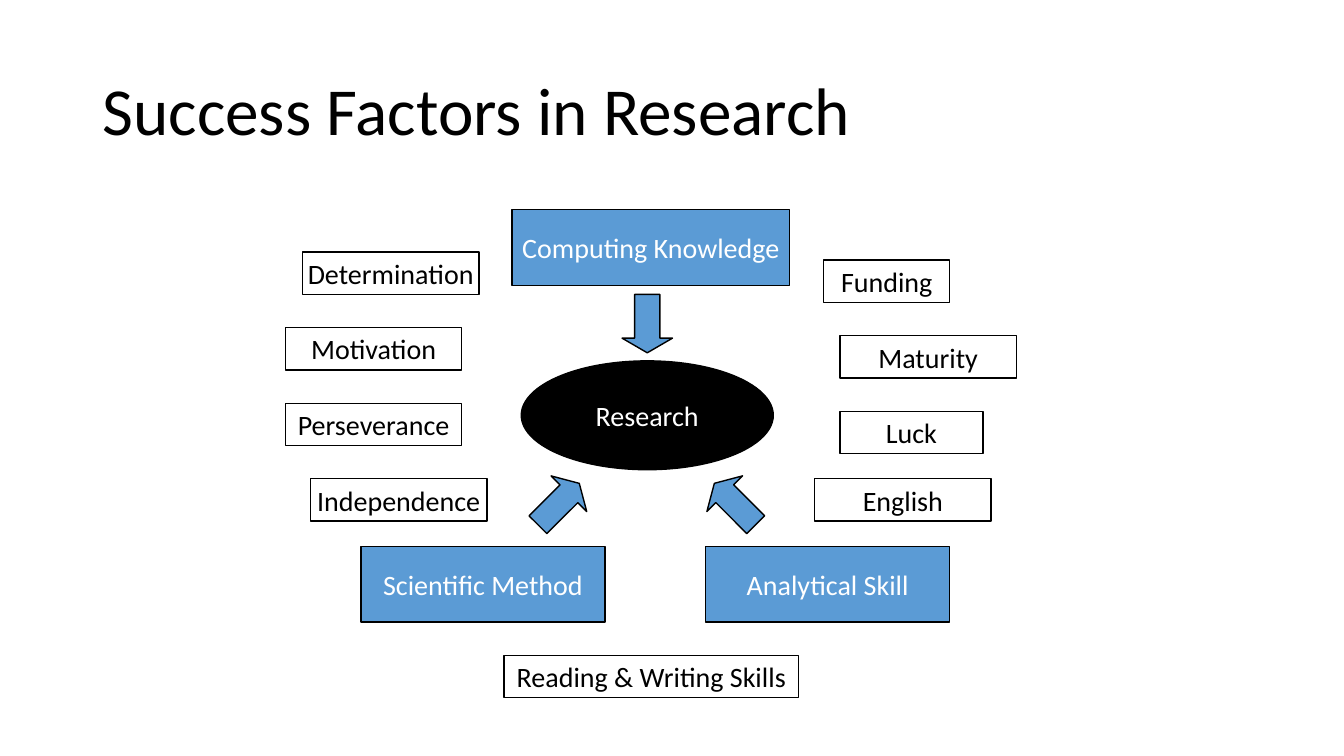
from pptx import Presentation
from pptx.dml.color import RGBColor
from pptx.enum import shapes, text
from pptx.util import Inches, Pt

COLORS = {"black": "000000", "white": "FFFFFF", "blue": "5B9BD5"}
FONT = "Calibri"
FACTOR_HEIGHT = 0.42
SKILL_HEIGHT = 0.75

# label, left, top, width
SKILLS = [
    ("Computing Knowledge", 5.08, 2.08, 2.75),
    ("Scientific Method", 3.58, 5.42, 2.42),
    ("Analytical Skill", 7, 5.42, 2.42),
]
# left, top, rotation
ARROWS = [(6.17, 2.92, 0), (5.29, 4.71, 225), (7.04, 4.71, 135)]
FACTORS = [
    ("Determination", 3, 2.5, 1.75),
    ("Motivation", 2.83, 3.25, 1.75),
    ("Perseverance", 2.83, 4, 1.75),
    ("Independence", 3.08, 4.75, 1.75),
    ("Funding", 8.17, 2.58, 1.25),
    ("Maturity", 8.33, 3.33, 1.75),
    ("Luck", 8.33, 4.08, 1.42),
    ("English", 8.08, 4.75, 1.75),
    ("Reading & Writing Skills", 5, 6.5, 2.92),
]


def color(name):
    return RGBColor.from_string(COLORS[name])


def write(shape, label, size, color_name, wrap):
    """Put one vertically centred line of text in the shape."""
    frame = shape.text_frame
    frame.word_wrap = wrap
    frame.vertical_anchor = text.MSO_ANCHOR.MIDDLE
    paragraph = frame.paragraphs[0]
    paragraph.text = label
    paragraph.font.name = FONT
    paragraph.font.size = Pt(size)
    paragraph.font.color.rgb = color(color_name)
    return paragraph


def add_title(slide, label):
    box = slide.shapes.add_textbox(Inches(0.92), Inches(0.4), Inches(11.5), Inches(1.45))
    paragraph = write(box, label, 48, "black", True)
    paragraph.line_spacing = 0.9


def add_outlined(slide, kind, left, top, width, height, fill=None):
    """Add a preset shape with a thin black outline; no fill if none is named."""
    shape = slide.shapes.add_shape(
        kind, Inches(left), Inches(top), Inches(width), Inches(height))
    shape.shadow.inherit = False
    if fill:
        shape.fill.solid()
        shape.fill.fore_color.rgb = color(fill)
    else:
        shape.fill.background()
    shape.line.color.rgb = color("black")
    shape.line.width = Pt(1)
    return shape


def add_label(slide, kind, label, left, top, width, height, fill=None):
    shape = add_outlined(slide, kind, left, top, width, height, fill)
    paragraph = write(shape, label, 20, "white" if fill else "black", False)
    paragraph.alignment = text.PP_ALIGN.CENTER


def add_arrow(slide, left, top, rotation):
    arrow = add_outlined(
        slide, shapes.MSO_SHAPE.DOWN_ARROW, left, top, 0.5, 0.58, "blue")
    arrow.adjustments[0] = 0.5
    arrow.adjustments[1] = 0.29
    arrow.rotation = rotation


def main():
    presentation = Presentation()
    presentation.slide_width = Inches(13.33)
    presentation.slide_height = Inches(7.5)
    slide = presentation.slides.add_slide(presentation.slide_layouts[6])

    add_title(slide, "Success Factors in Research")
    add_label(slide, shapes.MSO_SHAPE.OVAL, "Research", 5.17, 3.58, 2.5, 1.08, "black")
    rectangle = shapes.MSO_SHAPE.RECTANGLE
    for label, left, top, width in SKILLS:
        add_label(slide, rectangle, label, left, top, width, SKILL_HEIGHT, "blue")
    for left, top, rotation in ARROWS:
        add_arrow(slide, left, top, rotation)
    for label, left, top, width in FACTORS:
        add_label(slide, rectangle, label, left, top, width, FACTOR_HEIGHT)

    presentation.save("out.pptx")


if __name__ == "__main__":
    main()
